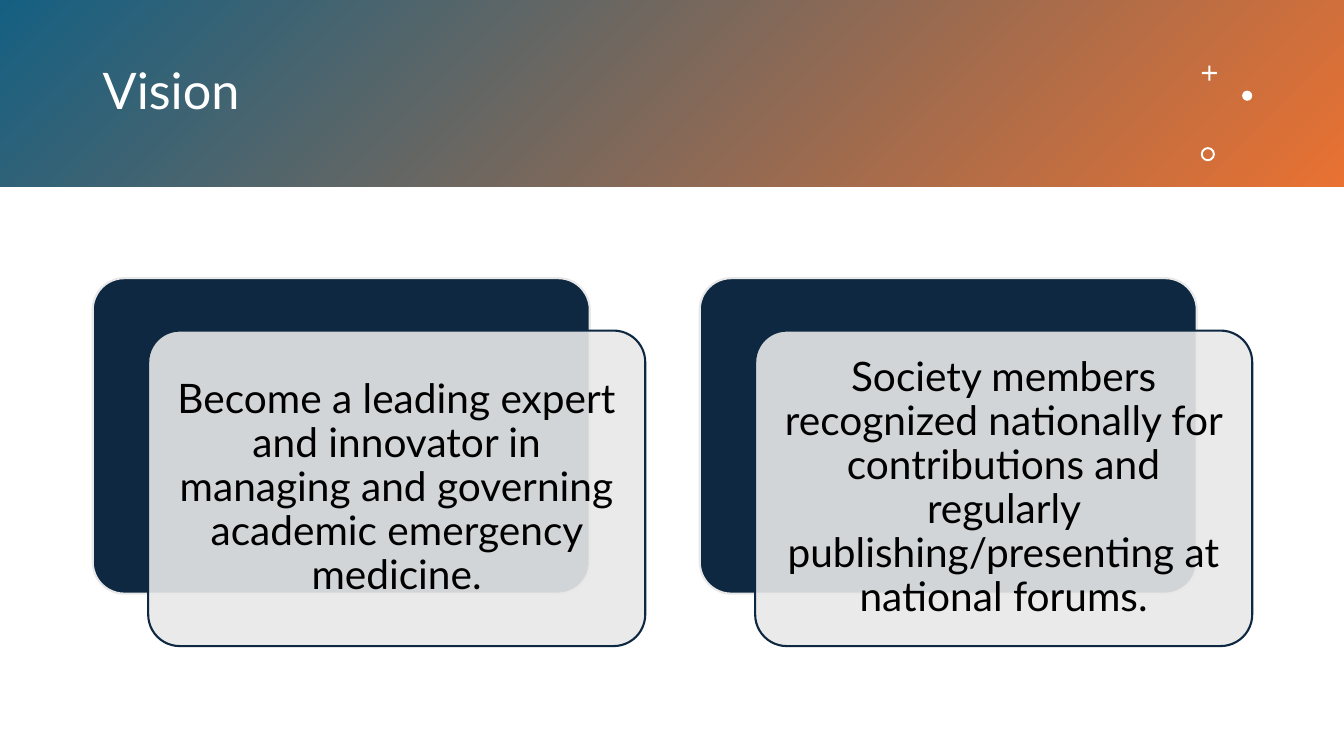
from lxml import etree
from pptx import Presentation
from pptx.dml.color import RGBColor
from pptx.enum.shapes import MSO_SHAPE as SHAPE
from pptx.enum.text import MSO_ANCHOR as ANCHOR, PP_ALIGN as ALIGN
from pptx.oxml.ns import qn
from pptx.util import Inches, Pt

COLORS = {
    "blue": "156082",
    "orange": "E97132",
    "navy": "0E2841",
    "gray": "E8E8E8",
    "white": "FFFFFF",
    "black": "000000",
}
VISIONS = [
    "Become a leading expert and innovator in managing and governing "
    "academic emergency medicine.",
    "Society members recognized nationally for contributions and regularly "
    "publishing/presenting at national forums.",
]
CARD_W, CARD_H = 4.93, 3.13
CARD_LEFT, CARD_TOP, CARD_PITCH = 0.92, 2.76, 6.02
FRONT_DX, FRONT_DY = 0.55, 0.52
TEXT_MARGIN = 0.09


def rgb(name):
    return RGBColor.from_string(COLORS[name])


class SlideBuilder:
    """Holds the text style and the slide being drawn."""

    def __init__(self, slide, font="Lato"):
        self.shapes = slide.shapes
        self.font = font

    def shape(self, kind, x, y, w, h, fill, line=None, adj=None, alpha=None):
        s = self.shapes.add_shape(kind, Inches(x), Inches(y), Inches(w), Inches(h))
        s.shadow.inherit = False
        s.fill.solid()
        s.fill.fore_color.rgb = rgb(fill)
        if alpha is not None:
            color = s.fill._xPr.find(".//" + qn("a:srgbClr"))
            etree.SubElement(color, qn("a:alpha"), val=str(alpha * 1000))
        if line:
            s.line.color.rgb = rgb(line)
            s.line.width = Pt(1.5)
        else:
            s.line.fill.background()
        if adj is not None:
            s.adjustments[0] = adj
        return s

    def banner(self, w, h):
        """Draw the header band, shaded from top left to bottom right."""
        s = self.shape(SHAPE.RECTANGLE, 0, 0, w, h, "blue")
        s.fill.gradient()
        s.fill.gradient_angle = 315
        for stop, name in zip(s.fill.gradient_stops, ("blue", "orange")):
            stop.color.rgb = rgb(name)

    def text(self, text, x, y, w, h, *, size, color, align=ALIGN.LEFT, inset=None):
        s = self.shapes.add_textbox(Inches(x), Inches(y), Inches(w), Inches(h))
        tf = s.text_frame
        tf.word_wrap = True
        tf.vertical_anchor = ANCHOR.MIDDLE
        if inset is not None:
            tf.margin_left = tf.margin_right = Inches(inset)
            tf.margin_top = tf.margin_bottom = Inches(inset)
        p = tf.paragraphs[0]
        p.alignment = align
        p.line_spacing = 0.9
        r = p.add_run()
        r.text = text
        r.font.name = self.font
        r.font.size = Pt(size)
        r.font.color.rgb = rgb(color)

    def card(self, x, y, text):
        """Draw a navy card with a translucent text card offset in front."""
        self.shape(SHAPE.ROUNDED_RECTANGLE, x, y, CARD_W, CARD_H,
                   "navy", line="gray", adj=0.1)
        x, y = x + FRONT_DX, y + FRONT_DY
        self.shape(SHAPE.ROUNDED_RECTANGLE, x, y, CARD_W, CARD_H,
                   "gray", line="navy", adj=0.1, alpha=90)
        self.text(text, x + TEXT_MARGIN, y + TEXT_MARGIN,
                  CARD_W - 2 * TEXT_MARGIN, CARD_H - 2 * TEXT_MARGIN,
                  size=29, color="black", align=ALIGN.CENTER, inset=0.12)


def main():
    prs = Presentation()
    prs.slide_width, prs.slide_height = Inches(13.33), Inches(7.5)
    builder = SlideBuilder(prs.slides.add_slide(prs.slide_layouts[6]))

    builder.banner(13.33, 1.85)
    builder.text("Vision", 0.92, 0.33, 10.75, 1.19, size=36, color="white")
    builder.shape(SHAPE.CROSS, 11.92, 0.65, 0.15, 0.15, "white", adj=0.43)
    builder.shape(SHAPE.OVAL, 12.32, 0.9, 0.1, 0.1, "white")
    builder.shape(SHAPE.DONUT, 11.91, 1.46, 0.14, 0.14, "white", adj=0.14)

    for i, vision in enumerate(VISIONS):
        builder.card(CARD_LEFT + i * CARD_PITCH, CARD_TOP, vision)

    prs.save("out.pptx")


if __name__ == "__main__":
    main()
